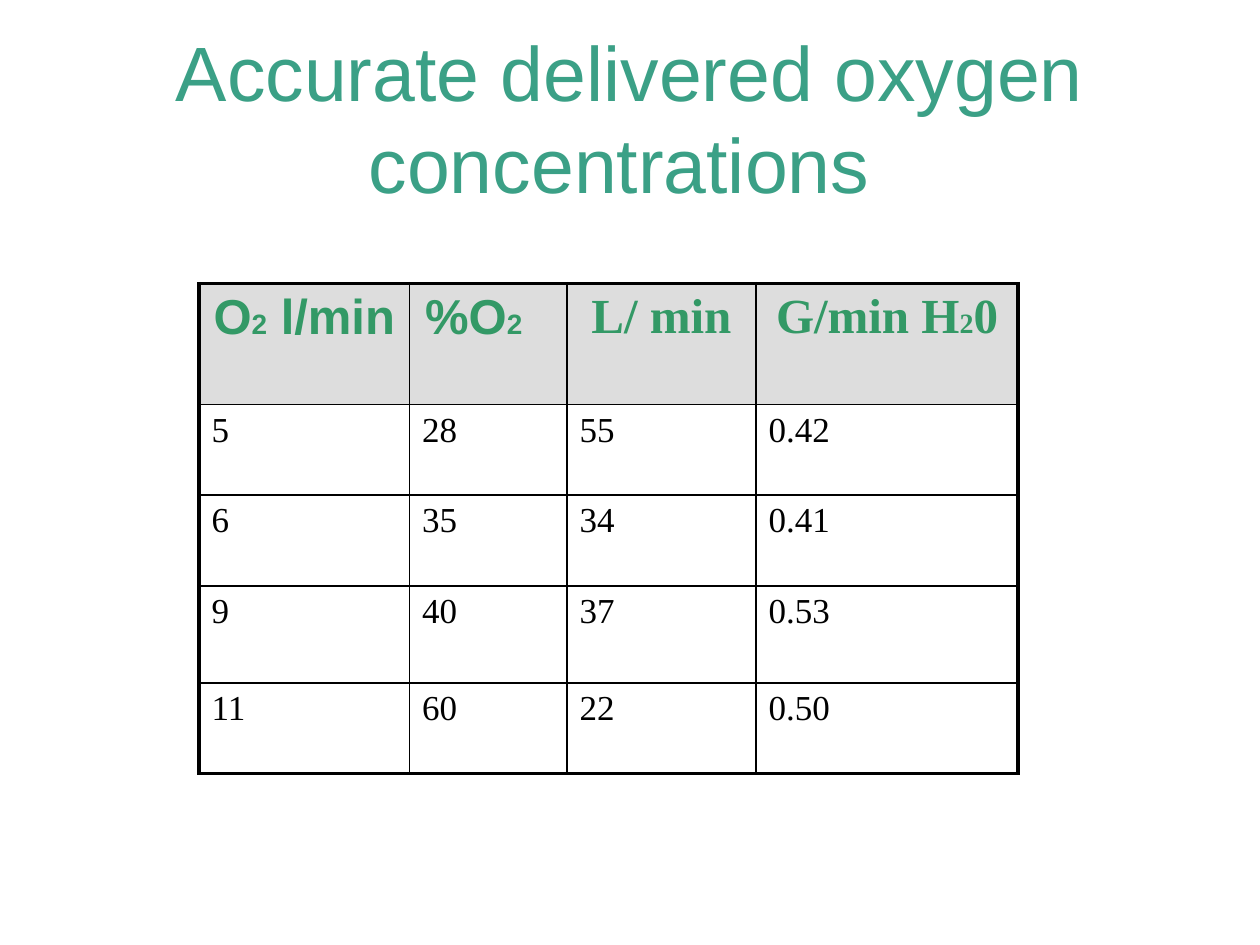
from lxml import etree
from pptx import Presentation
from pptx import util as u
from pptx.dml.color import RGBColor
from pptx.enum import text
from pptx.oxml import ns

COLORS = {"title": "3BA086", "header": "339966", "shade": "DDDDDD", "ink": "000000"}
SANS, SERIF = "Arial", "Times New Roman"
COLUMN_WIDTHS = [1.67, 1.25, 1.5, 2.08]
ROW_HEIGHTS = [0.96, 0.72, 0.72, 0.77, 0.72]
HEADERS = [
    (SANS, [("O", 28), ("2", 16), (" l/min", 28)]),
    (SANS, [("%O", 28), ("2", 16), ("\t", 28)]),
    (SERIF, [("L/ min", 28)]),
    (SERIF, [("G/min H", 28), ("2", 16), ("0", 28)]),
]
READINGS = [
    ["5", "28", "55", "0.42"],
    ["6", "35", "34", "0.41"],
    ["9", "40", "37", "0.53"],
    ["11", "60", "22", "0.50"],
]


def add_span(para, words, size, font, color, bold=False):
    """Add one formatted run to a paragraph."""
    span = para.add_run()
    span.text = words
    span.font.size = u.Pt(size)
    span.font.name = font
    span.font.bold = bold
    span.font.color.rgb = RGBColor.from_string(COLORS[color])


def add_title(page, words):
    """Place and fill the title placeholder."""
    title = page.shapes.title
    title.left, title.top = u.Inches(0.5), u.Inches(0.3)
    title.width, title.height = u.Inches(9), u.Inches(1.25)
    frame = title.text_frame
    frame.word_wrap = True
    frame.auto_size = text.MSO_AUTO_SIZE.NONE
    frame.vertical_anchor = text.MSO_ANCHOR.MIDDLE
    para = frame.paragraphs[0]
    para.alignment = text.PP_ALIGN.CENTER
    add_span(para, words, 44, SANS, "title")


def set_borders(cell, outer_sides):
    """Draw the cell borders, heavier on the outer sides of the table."""
    properties = cell._tc.get_or_add_tcPr()
    for side in "LRTB":
        width = u.Pt(2.25 if side in outer_sides else 1)
        line = etree.SubElement(properties, ns.qn(f"a:ln{side}"), w=str(int(width)))
        fill = etree.SubElement(line, ns.qn("a:solidFill"))
        etree.SubElement(fill, ns.qn("a:srgbClr"), val=COLORS["ink"])


def fill_cell(cell, font, spans, is_header):
    """Write and shade a header or reading cell."""
    para = cell.text_frame.paragraphs[0]
    para.alignment = text.PP_ALIGN.CENTER if is_header else text.PP_ALIGN.LEFT
    for words, size in spans:
        add_span(para, words, size, font, "header" if is_header else "ink", is_header)
    if is_header:
        cell.fill.solid()
        cell.fill.fore_color.rgb = RGBColor.from_string(COLORS["shade"])
    else:
        cell.fill.background()


def add_oxygen_table(page):
    """Add the table of oxygen flows and concentrations."""
    rows = [HEADERS] + [[(SERIF, [(value, 20)]) for value in row] for row in READINGS]
    last_row, last_column = len(rows) - 1, len(HEADERS) - 1
    table = page.shapes.add_table(
        len(rows), len(HEADERS), u.Inches(1.58), u.Inches(2.25),
        u.Inches(sum(COLUMN_WIDTHS)), u.Inches(sum(ROW_HEIGHTS))).table
    for column, width in zip(table.columns, COLUMN_WIDTHS):
        column.width = u.Inches(width)
    for row, height in zip(table.rows, ROW_HEIGHTS):
        row.height = u.Inches(height)
    for i, row in enumerate(rows):
        for j, (font, spans) in enumerate(row):
            edges = {"L": j == 0, "R": j == last_column, "T": i == 0, "B": i == last_row}
            cell = table.cell(i, j)
            set_borders(cell, [side for side, is_outer in edges.items() if is_outer])
            fill_cell(cell, font, spans, i == 0)


def main():
    """Build and save the slide."""
    deck = Presentation()
    deck.slide_width, deck.slide_height = u.Inches(10), u.Inches(7.5)
    page = deck.slides.add_slide(deck.slide_layouts[5])
    add_title(page, "Accurate delivered oxygen concentrations ")
    add_oxygen_table(page)
    deck.save("out.pptx")


if __name__ == "__main__":
    main()
